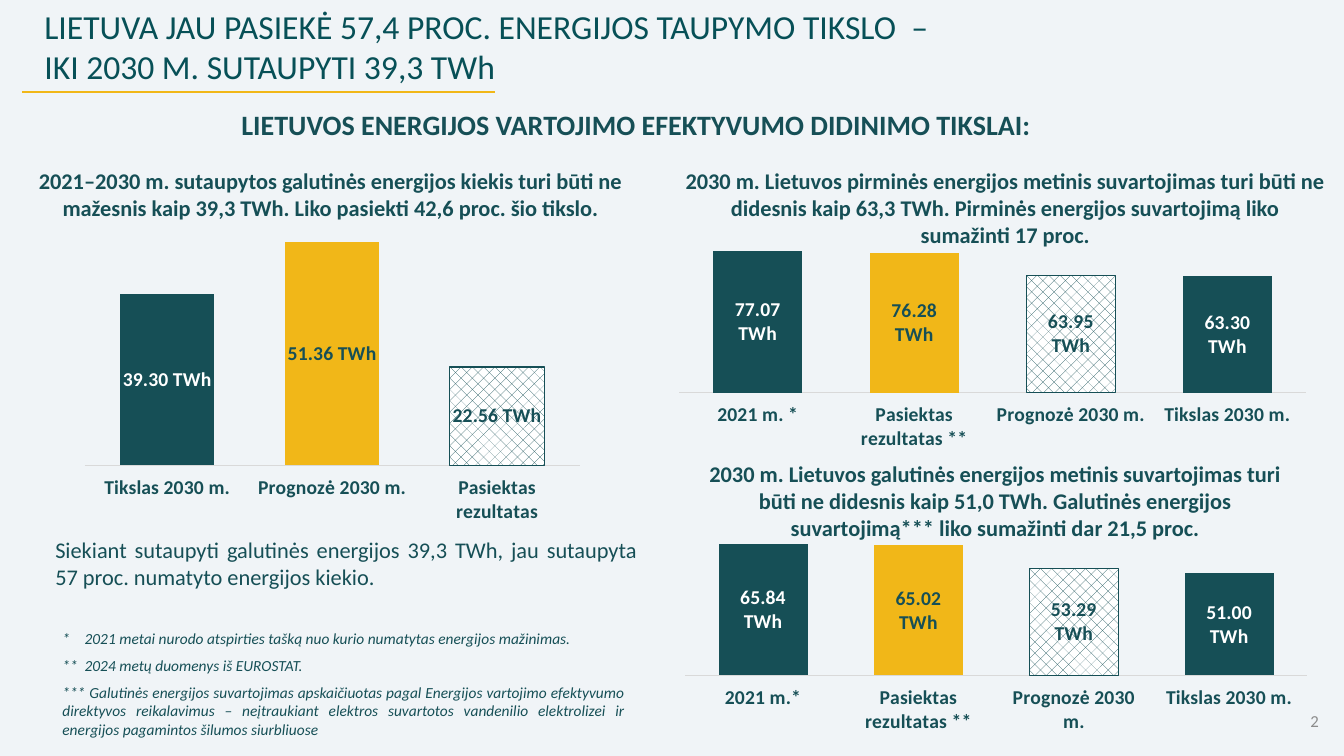
from lxml.etree import SubElement
from pptx import Presentation
from pptx.chart.data import CategoryChartData
from pptx.dml.color import RGBColor
from pptx.enum.chart import XL_CHART_TYPE, XL_LABEL_POSITION, XL_TICK_LABEL_POSITION, XL_TICK_MARK
from pptx.enum.dml import MSO_PATTERN
from pptx.enum.shapes import MSO_CONNECTOR
from pptx.enum.text import MSO_ANCHOR, PP_ALIGN
from pptx.oxml.ns import qn
from pptx.util import Inches, Pt

COLORS = {k: RGBColor.from_string(v) for k, v in {
    "background": "F0F4F7", "title": "075057", "teal": "164F56", "yellow": "F1B718",
    "white": "FFFFFF", "axis": "D9D9D9", "number": "8C8C8C"}.items()}
FONT = "Calibri"
UNIT_FORMAT = '#,##0.00" TWh"'


def set_font(font, size, color, bold=False, italic=False):
    font.name = FONT
    font.size = Pt(size)
    font.bold = bold
    font.italic = italic
    font.color.rgb = COLORS[color]


def fill_text(sp, box, lines, size, color, align, bold=False, italic=False, before=0):
    sp.left, sp.top, sp.width, sp.height = [Inches(v) for v in box]
    tf = sp.text_frame
    tf.word_wrap = True
    tf.vertical_anchor = MSO_ANCHOR.TOP
    for i, line in enumerate(lines):
        p = tf.paragraphs[0] if i == 0 else tf.add_paragraph()
        p.text = line
        p.alignment = align
        p.space_before = Pt(before if i else 0)
        if "\t" in line:
            tabs = SubElement(p._p.get_or_add_pPr(), qn("a:tabLst"))
            SubElement(tabs, qn("a:tab"), pos=str(Inches(0.22)), algn="l")
        set_font(p.font, size, color, bold, italic)
    return tf


prs = Presentation()
prs.slide_width = Inches(13.33)
prs.slide_height = Inches(7.5)
s = prs.slides.add_slide(prs.slide_layouts[5])
s.background.fill.solid()
s.background.fill.fore_color.rgb = COLORS["background"]

fill_text(s.shapes.title, (0.34, 0.01, 11.24, 0.91),
          ["LIETUVA JAU PASIEKĖ 57,4 PROC. ENERGIJOS TAUPYMO TIKSLO  –",
           "IKI 2030 M. SUTAUPYTI 39,3 TWh"], 24, "title", PP_ALIGN.LEFT)

rule = s.shapes.add_connector(MSO_CONNECTOR.STRAIGHT, Inches(0.22), Inches(0.91),
                              Inches(4.91), Inches(0.91))
rule.line.color.rgb = COLORS["yellow"]
rule.line.width = Pt(1.5)
SubElement(rule._element.spPr, qn("a:effectLst"))

headings = [
    ((2.16, 1.02, 8.3, 0.37), 20,
     ["LIETUVOS ENERGIJOS VARTOJIMO EFEKTYVUMO DIDINIMO TIKSLAI:"]),
    ((0.26, 1.61, 6.04, 0.96), 16,
     ["2021–2030 m. sutaupytos galutinės energijos kiekis turi būti ne mažesnis kaip "
      "39,3 TWh. Liko pasiekti 42,6 proc. šio tikslo."]),
    ((6.61, 1.61, 6.72, 0.7), 16,
     ["2030 m. Lietuvos pirminės energijos metinis suvartojimas turi būti ne didesnis kaip "
      "63,3 TWh. Pirminės energijos suvartojimą liko", "sumažinti 17 proc."]),
    ((6.86, 4.52, 6.02, 1.28), 16,
     ["2030 m. Lietuvos galutinės energijos metinis suvartojimas turi būti ne didesnis kaip "
      "51,0 TWh. Galutinės energijos suvartojimą*** liko sumažinti dar 21,5 proc."]),
]
for box, size, lines in headings:
    fill_text(s.shapes.add_textbox(0, 0, 0, 0), box, lines, size, "teal",
              PP_ALIGN.CENTER, bold=True)

fill_text(s.shapes.add_textbox(0, 0, 0, 0), (0.45, 5.27, 5.97, 0.91),
          ["Siekiant sutaupyti galutinės energijos 39,3 TWh, jau sutaupyta 57 proc. "
           "numatyto energijos kiekio."], 16, "teal", PP_ALIGN.JUSTIFY)

fill_text(s.shapes.add_textbox(0, 0, 0, 0), (0.52, 6.19, 5.78, 1.19),
          ["*\t2021 metai nurodo atspirties tašką nuo kurio numatytas energijos mažinimas.",
           "**\t2024 metų duomenys iš EUROSTAT.",
           "*** Galutinės energijos suvartojimas apskaičiuotas pagal Energijos vartojimo "
           "efektyvumo direktyvos reikalavimus – neįtraukiant elektros suvartotos vandenilio "
           "elektrolizei ir energijos pagamintos šilumos siurbliuose"],
          11, "teal", PP_ALIGN.JUSTIFY, italic=True, before=6)

tf = fill_text(s.shapes.add_textbox(0, 0, 0, 0), (10.18, 6.95, 3, 0.4), ["2"],
               12, "number", PP_ALIGN.RIGHT)
tf.vertical_anchor = MSO_ANCHOR.MIDDLE

charts = [
    ((0.74, 1.96, 5.11, 3.3), 60,
     ["Tikslas 2030 m.", "Prognozė 2030 m.", "Pasiektas rezultatas"], [39.3, 51.36, 22.56]),
    ((6.61, 2.21, 6.47, 2.31), 90,
     ["2021 m. *", "Pasiektas rezultatas **", "Prognozė 2030 m.", "Tikslas 2030 m."],
     [77.07, 76.28, 63.95, 63.3]),
    ((6.67, 5.27, 6.42, 2.05), 70,
     ["2021 m.*", "Pasiektas rezultatas **", "Prognozė 2030 m.", "Tikslas 2030 m."],
     [65.84, 65.02, 53.29, 51]),
]
for box, maximum, categories, values in charts:
    data = CategoryChartData(number_format=UNIT_FORMAT)
    data.categories = categories
    data.add_series("Series 1", values)
    chart = s.shapes.add_chart(XL_CHART_TYPE.COLUMN_CLUSTERED,
                               *[Inches(v) for v in box], data).chart
    chart.has_title = False
    chart.has_legend = False
    set_font(chart.font, 14, "teal", bold=True)

    axis = chart.category_axis
    axis.major_tick_mark = XL_TICK_MARK.NONE
    axis.tick_label_position = XL_TICK_LABEL_POSITION.LOW
    axis.format.line.color.rgb = COLORS["axis"]
    axis.format.line.width = Pt(0.75)
    set_font(axis.tick_labels.font, 14, "teal", bold=True)
    chart.value_axis.visible = False
    chart.value_axis.has_major_gridlines = False
    chart.value_axis.minimum_scale = 0
    chart.value_axis.maximum_scale = maximum

    plot = chart.plots[0]
    plot.gap_width = 75
    plot.vary_by_categories = False
    series = plot.series[0]
    series.format.fill.solid()
    series.format.fill.fore_color.rgb = COLORS["teal"]
    labels = series.data_labels
    labels.show_value = True
    labels.number_format = UNIT_FORMAT
    labels.number_format_is_linked = False
    labels.position = XL_LABEL_POSITION.CENTER
    set_font(labels.font, 14, "white", bold=True)

    achieved, hatched = series.points[1], series.points[2]
    achieved.format.fill.solid()
    achieved.format.fill.fore_color.rgb = COLORS["yellow"]
    hatched.format.fill.patterned()
    hatched.format.fill.pattern = MSO_PATTERN.PERCENT_25
    hatched.format.fill.fore_color.rgb = COLORS["teal"]
    hatched.format.fill.back_color.rgb = COLORS["white"]
    hatched.format.line.color.rgb = COLORS["teal"]
    hatched.format.line.width = Pt(0.75)
    for point in (achieved, hatched):
        set_font(point.data_label.font, 14, "teal", bold=True)
        point.data_label.position = XL_LABEL_POSITION.CENTER

prs.save("out.pptx")
